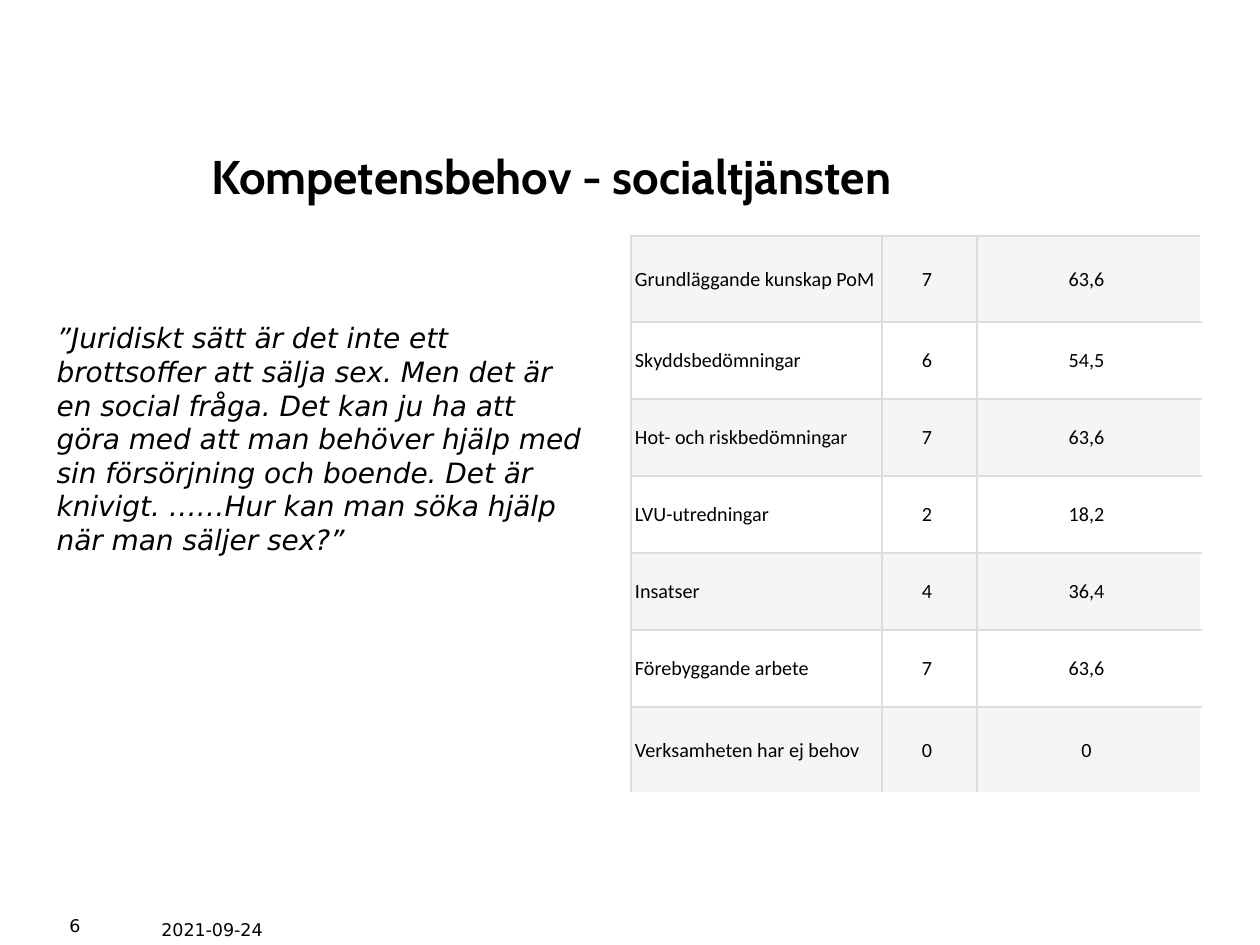
"""Build a slide with a quote and a table of competence needs in social services."""
from lxml import etree
from pptx import Presentation, util as u
from pptx.dml.color import RGBColor
from pptx.enum import text
from pptx.oxml.ns import qn

TITLE = "Kompetensbehov - socialtjänsten"
QUOTE = (
    "”Juridiskt sätt är det inte ett brottsoffer att sälja sex. Men det är en social fråga. "
    "Det kan ju ha att göra med att man behöver hjälp med sin försörjning och boende. "
    "Det är knivigt. ……Hur kan man söka hjälp när man säljer sex?”"
)
FOOTERS = [("2021-09-24", (149, 916, 164, 28)), ("6", (57, 906, 39, 40))]
NEEDS = [
    ("Grundläggande kunskap PoM", "7", "63,6"),
    ("Skyddsbedömningar", "6", "54,5"),
    ("Hot- och riskbedömningar", "7", "63,6"),
    ("LVU-utredningar", "2", "18,2"),
    ("Insatser", "4", "36,4"),
    ("Förebyggande arbete", "7", "63,6"),
    ("Verksamheten har ej behov", "0", "0"),
]
COLUMN_WIDTHS = [251, 95, 224]
ROW_HEIGHTS = [86] + [77] * 5 + [86]
BLACK, WHITE, STRIPE, BORDER = "000000", "FFFFFF", "F5F5F5", "DDDDDD"
LEFT, CENTER = text.PP_ALIGN.LEFT, text.PP_ALIGN.CENTER
TOP, MIDDLE, BOTTOM = text.MSO_ANCHOR.TOP, text.MSO_ANCHOR.MIDDLE, text.MSO_ANCHOR.BOTTOM


def px(length):
    return u.Emu(round(length * 914400 / 126))


def color(value):
    return RGBColor.from_string(value)


def place(shape, box):
    shape.left, shape.top, shape.width, shape.height = map(px, box)


def write(frame, words, font_name, size, align=LEFT, bold=False, italic=False):
    frame.text = words
    frame.word_wrap = True
    paragraph = frame.paragraphs[0]
    paragraph.alignment = align
    font = paragraph.runs[0].font
    font.name, font.size, font.bold, font.italic = font_name, u.Pt(size), bold, italic
    font.color.rgb = color(BLACK)


def remove_bullet(paragraph):
    properties = paragraph._p.get_or_add_pPr()
    properties.set("marL", "0")
    properties.set("indent", "0")
    etree.SubElement(properties, qn("a:buNone"))


def add_border(cell, side):
    properties = cell._tc.get_or_add_tcPr()
    line = etree.SubElement(properties, qn(f"a:ln{side}"), w=str(u.Pt(1)))
    fill = etree.SubElement(line, qn("a:solidFill"))
    etree.SubElement(fill, qn("a:srgbClr"), val=BORDER)


def add_needs_table(slide):
    box = (631, 236, sum(COLUMN_WIDTHS), sum(ROW_HEIGHTS))
    table = slide.shapes.add_table(len(NEEDS), len(COLUMN_WIDTHS), *map(px, box)).table
    for column, width in zip(table.columns, COLUMN_WIDTHS):
        column.width = px(width)
    for row, height in zip(table.rows, ROW_HEIGHTS):
        row.height = px(height)
    last_row, last_column = len(NEEDS) - 1, len(COLUMN_WIDTHS) - 1
    for i, need in enumerate(NEEDS):
        for j, words in enumerate(need):
            cell = table.cell(i, j)
            write(cell.text_frame, words, "Calibri", 11.5, CENTER if j else LEFT)
            cell.vertical_anchor = MIDDLE
            cell.margin_left = cell.margin_top = px(4)
            cell.margin_right = px(9 if j else 3)
            cell.margin_bottom = px(3)
            sides = "L" + ("R" if j < last_column else "") + "T" + ("B" if i < last_row else "")
            for side in sides:
                add_border(cell, side)
            cell.fill.solid()
            cell.fill.fore_color.rgb = color(WHITE if i % 2 else STRIPE)


def main():
    presentation = Presentation()
    presentation.slide_width, presentation.slide_height = u.Inches(10), u.Inches(7.5)
    slide = presentation.slides.add_slide(presentation.slide_layouts[1])
    title, body = slide.placeholders

    place(title, (81, 123, 953, 87))
    write(title.text_frame, TITLE, "Cabin", 27, CENTER, bold=True)
    title.text_frame.vertical_anchor = BOTTOM
    title.text_frame.margin_right = px(25)

    place(body, (44, 236, 556, 556))
    frame = body.text_frame
    write(frame, QUOTE, "DejaVu Sans", 16, italic=True)
    remove_bullet(frame.paragraphs[0])
    frame.paragraphs[0].space_before = u.Pt(0)
    frame.vertical_anchor = TOP
    frame.margin_top = px(85)
    for placeholder in (title, body):
        placeholder.text_frame.auto_size = text.MSO_AUTO_SIZE.NONE

    for words, box in FOOTERS:
        footer = slide.shapes.add_textbox(*map(px, box))
        write(footer.text_frame, words, "DejaVu Sans", 10)
        footer.text_frame.vertical_anchor = MIDDLE

    add_needs_table(slide)
    presentation.save("out.pptx")


if __name__ == "__main__":
    main()
